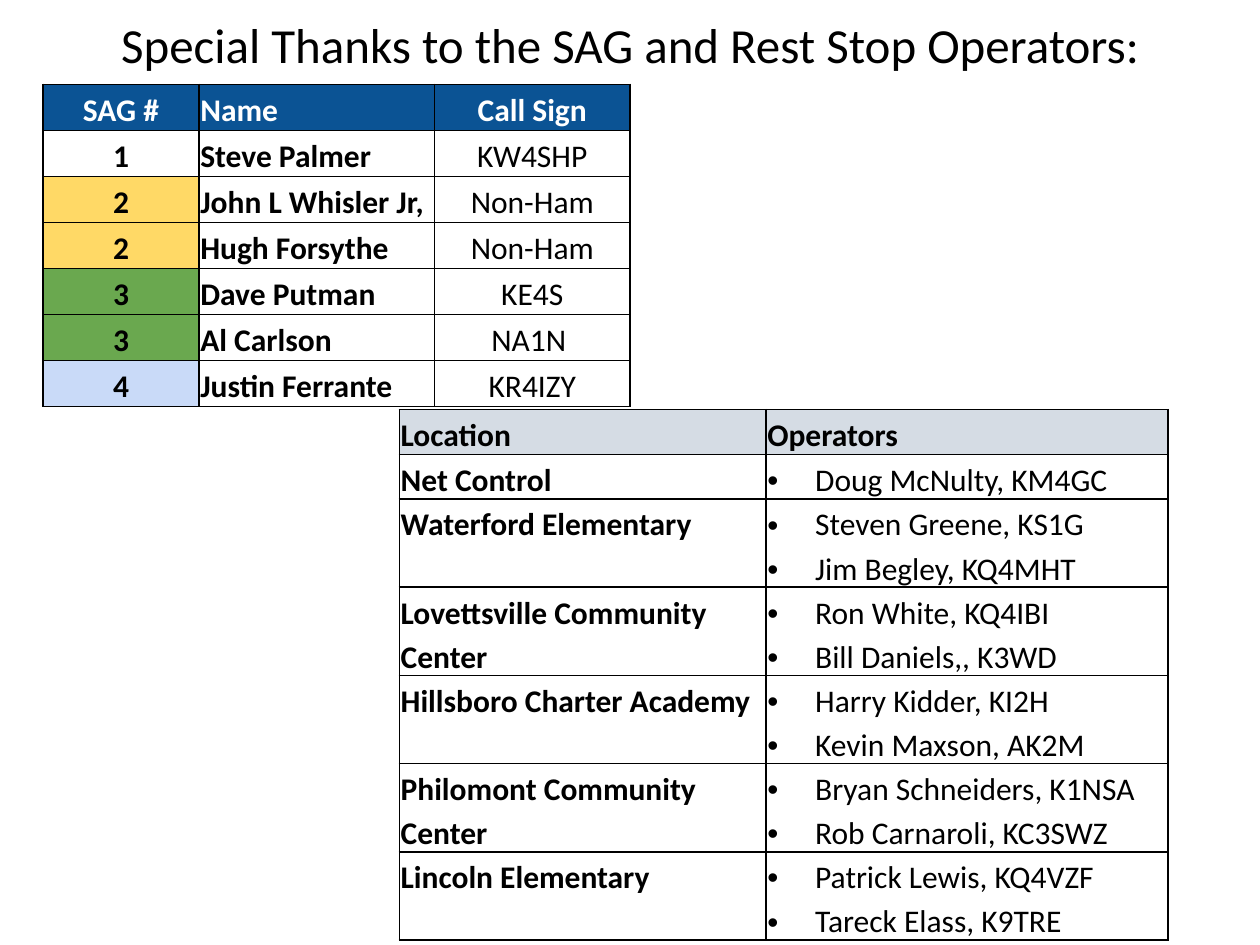
from dataclasses import dataclass

from lxml.etree import SubElement
from pptx import Presentation
from pptx.dml.color import RGBColor
from pptx.enum.text import MSO_ANCHOR as Anchor, PP_ALIGN as Align
from pptx.oxml.ns import qn
from pptx.util import Inches, Pt


@dataclass(frozen=True)
class Theme:
    """Colours, font and type sizes of the slide."""
    font: str = "Calibri"
    title: int = 28
    body: int = 18
    black: str = "000000"
    white: str = "FFFFFF"
    blue: str = "0B5394"
    grey: str = "D5DCE4"
    yellow: str = "FFD966"
    green: str = "6AA84F"
    pale: str = "C9DAF8"


T = Theme()
SAG_FILLS = {"1": None, "2": T.yellow, "3": T.green, "4": T.pale}
SAG_HEADER = ("SAG #", "Name", "Call Sign")
SAG_OPERATORS = [
    ("1", "Steve Palmer", "KW4SHP"),
    ("2", "John L Whisler Jr,", "Non-Ham"),
    ("2", "Hugh Forsythe", "Non-Ham"),
    ("3", "Dave Putman", "KE4S"),
    ("3", "Al Carlson", "NA1N "),
    ("4", "Justin Ferrante", "KR4IZY"),
]
REST_STOPS = [
    ("Net Control", ["Doug McNulty, KM4GC"]),
    ("Waterford Elementary", ["Steven Greene, KS1G", "Jim Begley, KQ4MHT"]),
    ("Lovettsville Community Center", ["Ron White, KQ4IBI", "Bill Daniels,, K3WD"]),
    ("Hillsboro Charter Academy", ["Harry Kidder, KI2H", "Kevin Maxson, AK2M"]),
    ("Philomont Community Center", ["Bryan Schneiders, K1NSA", "Rob Carnaroli, KC3SWZ"]),
    ("Lincoln Elementary", ["Patrick Lewis, KQ4VZF", "Tareck Elass, K9TRE"]),
]


def add_bullet(p):
    """Give a paragraph a hanging bullet and a tab stop."""
    pPr = p._p.get_or_add_pPr()
    pPr.set("marL", str(Inches(0.38)))
    pPr.set("indent", str(-Inches(0.38)))
    SubElement(pPr, qn("a:buFont"), typeface="Arial")
    SubElement(pPr, qn("a:buChar"), char="•")
    tabs = SubElement(pPr, qn("a:tabLst"))
    SubElement(tabs, qn("a:tab"), pos=str(Inches(0.5)), algn="l")


def write(tf, lines, size=T.body, color=T.black, bold=False, align=Align.LEFT,
          spacing=1.15, bullet=False):
    """Write lines as formatted paragraphs of a text frame."""
    for i, line in enumerate(lines):
        p = tf.add_paragraph() if i else tf.paragraphs[0]
        if bullet:
            add_bullet(p)
        p.alignment, p.line_spacing = align, spacing
        r = p.add_run()
        r.text = line
        r.font.name, r.font.size, r.font.bold = T.font, Pt(size), bold
        r.font.color.rgb = RGBColor.from_string(color)


def add_title(s, text):
    """Add the centred slide title."""
    sp = s.shapes.add_textbox(Inches(0.5), Inches(0.18), Inches(9), Inches(0.33))
    tf = sp.text_frame
    tf.word_wrap, tf.vertical_anchor = True, Anchor.MIDDLE
    write(tf, [text], size=T.title, align=Align.CENTER, spacing=1.0)


def add_grid(s, left, top, widths, heights):
    """Add a plain table with the given column widths and row heights."""
    frame = s.shapes.add_table(len(heights), len(widths), Inches(left), Inches(top),
                               Inches(sum(widths)), Inches(sum(heights)))
    table = frame.table
    table.first_row = table.horz_banding = False
    for col, width in zip(table.columns, widths):
        col.width = Inches(width)
    for row, height in zip(table.rows, heights):
        row.height = Inches(height)
    return table


def fill_cell(cell, lines, fill=None, anchor=Anchor.TOP, bottom=0, **fmt):
    """Set the borders, fill, margins and text of a cell."""
    tcPr = cell._tc.get_or_add_tcPr()
    for side in ("lnL", "lnR", "lnT", "lnB"):
        ln = SubElement(tcPr, qn(f"a:{side}"), w=str(Pt(1)))
        SubElement(SubElement(ln, qn("a:solidFill")), qn("a:srgbClr"), val=T.black)
    if fill:
        cell.fill.solid()
        cell.fill.fore_color.rgb = RGBColor.from_string(fill)
    else:
        cell.fill.background()
    cell.margin_left = cell.margin_right = cell.margin_top = Inches(0.01)
    cell.margin_bottom = Inches(bottom)
    cell.vertical_anchor = anchor
    write(cell.text_frame, lines, **fmt)


def add_rest_stops(s):
    """Add the table of locations and their operators."""
    lines = [1] + [len(names) for _, names in REST_STOPS]
    table = add_grid(s, 3.17, 3.25, [2.91, 3.19], [0.35 * n for n in lines])
    for c, text in enumerate(("Location", "Operators")):
        fill_cell(table.cell(0, c), [text], fill=T.grey, bold=True)
    for r, (location, names) in enumerate(REST_STOPS, 1):
        fill_cell(table.cell(r, 0), [location], bold=True)
        fill_cell(table.cell(r, 1), names, bullet=True)


def add_sag_operators(s):
    """Add the table of SAG operators and call signs."""
    rows = [SAG_HEADER] + SAG_OPERATORS
    table = add_grid(s, 0.34, 0.67, [1.24, 1.87, 1.55], [0.36] * len(rows))
    for r, row in enumerate(rows):
        for c, text in enumerate(row):
            header = r == 0
            fill = T.blue if header else SAG_FILLS[text] if c == 0 else None
            fill_cell(table.cell(r, c), [text], fill=fill, anchor=Anchor.BOTTOM,
                      bottom=0.01, color=T.white if header else T.black,
                      bold=header or c < 2,
                      align=Align.LEFT if c == 1 else Align.CENTER)


def main():
    """Build and save the slide."""
    prs = Presentation()
    prs.slide_width, prs.slide_height = Inches(10), Inches(7.5)
    s = prs.slides.add_slide(prs.slide_layouts[6])
    add_title(s, "Special Thanks to the SAG and Rest Stop Operators:")
    add_rest_stops(s)
    add_sag_operators(s)
    prs.save("out.pptx")


if __name__ == "__main__":
    main()
